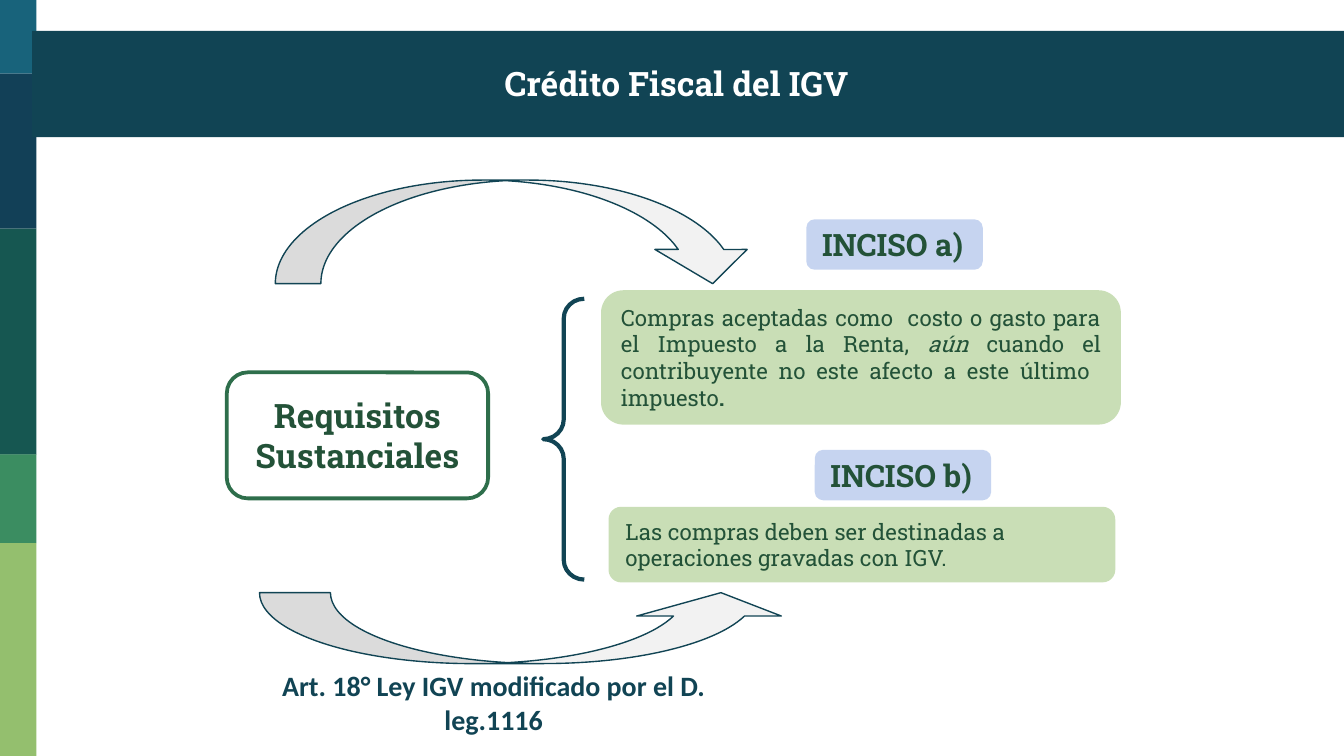
"""Build the slide on the substantive requirements of the IGV tax credit."""
from dataclasses import dataclass
from itertools import pairwise

from lxml import etree
from pptx import Presentation
from pptx import util as u
from pptx.dml.color import RGBColor
from pptx.enum import shapes, text
from pptx.oxml import ns

SHAPE = shapes.MSO_SHAPE
ALIGN = text.PP_ALIGN


@dataclass(frozen=True)
class Theme:
    """Colours, fonts and type sizes."""
    navy: str = "114454"
    ink: str = "235238"
    outline: str = "2E6E4B"
    white: str = "FFFFFF"
    label: str = "8FABE3"
    card: str = "94BF6E"
    arrow: str = "E6E6E6"
    stripes: tuple = ("18637B", "124057", "165751", "3B8D61", "94BF6E")
    slab: str = "Roboto Slab"
    sans: str = "Calibri"
    heading: float = 18
    label_size: float = 16.5
    note: float = 15
    body: float = 12


THEME = Theme()


def write(shape, *paragraphs, size=THEME.body, font=THEME.slab, color=THEME.ink,
          bold=False, align=ALIGN.LEFT, wrap=True):
    """Write paragraphs, each a string or a list of (text, style) runs."""
    frame = shape.text_frame
    frame.word_wrap = wrap
    frame.vertical_anchor = text.MSO_ANCHOR.MIDDLE
    for index, content in enumerate(paragraphs):
        paragraph = frame.add_paragraph() if index else frame.paragraphs[0]
        paragraph.alignment = align
        runs = [(content, "")] if isinstance(content, str) else content
        for words, style in runs:
            run = paragraph.add_run()
            run.text = words
            run.font.name = font
            run.font.size = u.Pt(size)
            run.font.bold = bold or style == "bold"
            run.font.italic = style == "italic"
            run.font.color.rgb = RGBColor.from_string(color)


def add_shape(slide, kind, box, fill=None, alpha=None, line=None, weight=1, adjust=()):
    """Add a flat preset shape, with an optional opacity in percent."""
    shape = slide.shapes.add_shape(kind, *map(u.Pt, box))
    shape.shadow.inherit = False
    for index, value in enumerate(adjust):
        shape.adjustments[index] = value
    if fill:
        shape.fill.solid()
        shape.fill.fore_color.rgb = RGBColor.from_string(fill)
    else:
        shape.fill.background()
    if alpha:
        color = next(shape.element.spPr.iter(ns.qn("a:srgbClr")))
        etree.SubElement(color, ns.qn("a:alpha"), val=str(alpha * 1000))
    if line:
        shape.line.color.rgb = RGBColor.from_string(line)
        shape.line.width = u.Pt(weight)
    else:
        shape.line.fill.background()
    return shape


def add_stripes(slide):
    """Stack the coloured stripes down the left edge."""
    edges = pairwise((0, 39.5, 122.5, 243.5, 291, 405))
    for color, (top, bottom) in zip(THEME.stripes, edges):
        add_shape(slide, SHAPE.RECTANGLE, (0, top, 19.5, bottom - top), color)


def add_title(slide, words):
    """Place the title placeholder over the dark band."""
    add_shape(slide, SHAPE.RECTANGLE, (17.3, 16.5, 702.7, 57), THEME.navy)
    title = slide.shapes.title
    title.left, title.top, title.width, title.height = map(u.Pt, (121.5, 30, 482, 29))
    write(title, words, size=THEME.heading, color=THEME.white, bold=True,
          align=ALIGN.CENTER)
    title.element.getparent().append(title.element)


def add_arrow(slide, kind, box, adjust):
    """Add a translucent curved arrow."""
    add_shape(slide, kind, box, THEME.arrow, 50, THEME.navy, 0.75, adjust)


def add_clause(slide, label, label_box, content, card_box, align=ALIGN.LEFT):
    """Add a clause label and the card that explains it."""
    tag = add_shape(slide, SHAPE.ROUNDED_RECTANGLE, label_box, THEME.label, 50)
    write(tag, label, size=THEME.label_size, bold=True)
    card = add_shape(slide, SHAPE.ROUNDED_RECTANGLE, card_box, THEME.card, 50)
    write(card, content, align=align)


def add_requirements(slide):
    """Add the requirements box and the brace beside it."""
    box = add_shape(slide, SHAPE.ROUNDED_RECTANGLE, (121.5, 199.5, 140, 67.5),
                    THEME.white, line=THEME.outline, weight=2)
    write(box, "Requisitos", "Sustanciales", size=THEME.heading, bold=True,
          align=ALIGN.CENTER, wrap=False)
    brace = add_shape(slide, SHAPE.RIGHT_BRACE, (291, 160, 22, 150.5),
                      line=THEME.navy, weight=2.25, adjust=(0.48, 0.5))
    brace.rotation = 180


def add_legal_note(slide, words):
    """Add the legal reference at the foot."""
    note = slide.shapes.add_textbox(*map(u.Pt, (124, 368, 281, 16.5)))
    write(note, words, size=THEME.note, font=THEME.sans, color=THEME.navy,
          bold=True, align=ALIGN.CENTER, wrap=False)


def main():
    """Build and save the presentation."""
    presentation = Presentation()
    presentation.slide_width, presentation.slide_height = u.Pt(720), u.Pt(405)
    slide = presentation.slides.add_slide(presentation.slide_layouts[5])
    add_stripes(slide)
    add_title(slide, "Crédito Fiscal del IGV")
    add_requirements(slide)
    add_legal_note(slide, "Art. 18° Ley IGV modificado por el D. leg.1116")
    add_arrow(slide, SHAPE.CURVED_DOWN_ARROW, (147.5, 96.5, 259, 55.5),
              (0.44, 0.89, 0.33))
    add_clause(slide, "INCISO a)", (432, 117.5, 94.5, 27),
               [("Compras aceptadas como  costo o gasto para el Impuesto a la Renta,", ""),
                (" aún ", "italic"),
                ("cuando el contribuyente no este afecto a este último  impuesto", ""),
                (".", "bold")],
               (322, 155.5, 278.5, 72), ALIGN.JUSTIFY)
    add_clause(slide, "INCISO b)", (436.5, 241, 94.5, 27),
               "Las compras deben ser destinadas a operaciones gravadas con IGV.",
               (326, 271.5, 271.5, 40.5))
    add_arrow(slide, SHAPE.CURVED_UP_ARROW, (139, 317.5, 286, 38),
              (1.02, 2.04, 0.33))
    presentation.save("out.pptx")


if __name__ == "__main__":
    main()
